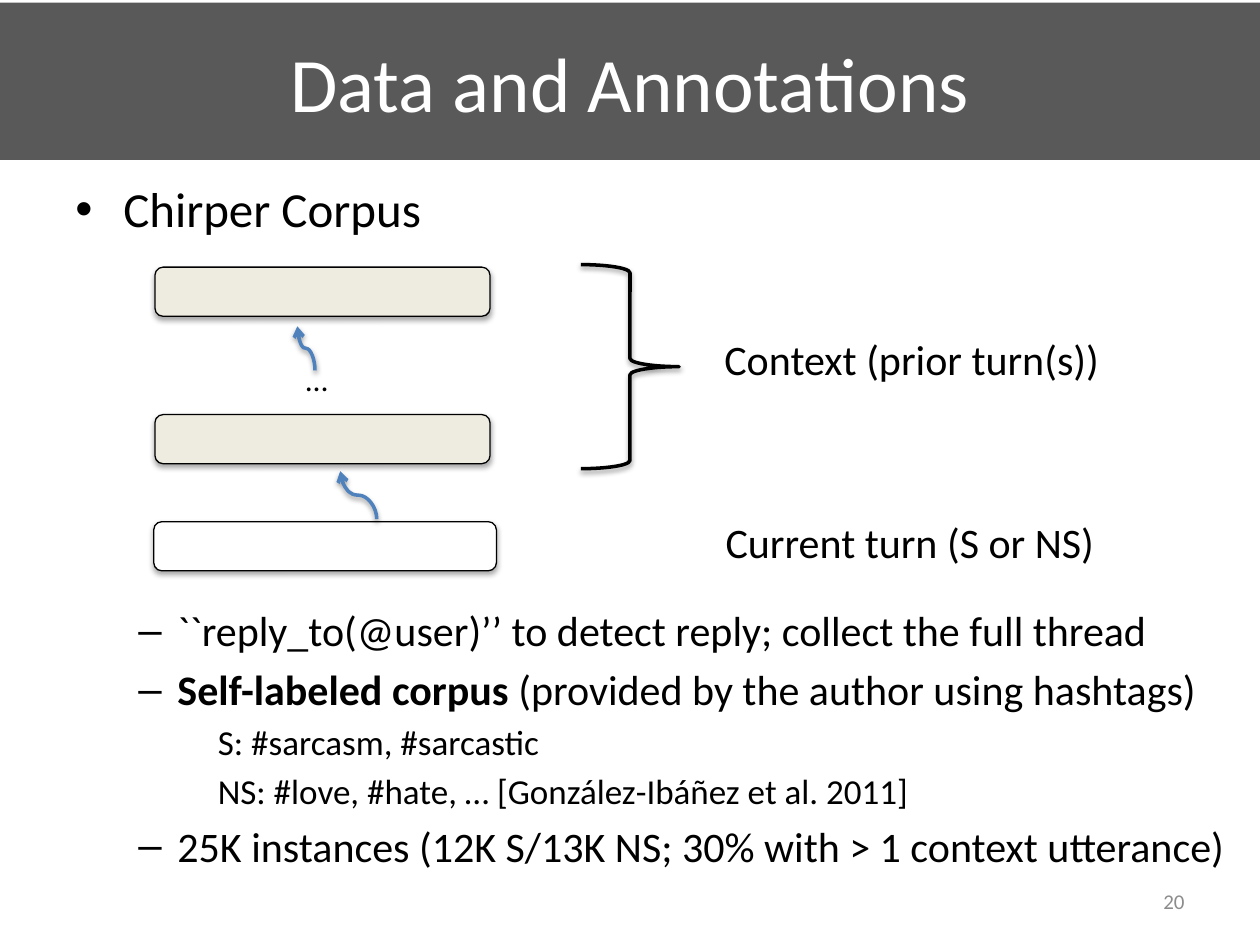
from dataclasses import dataclass

from lxml import etree
from pptx import Presentation
from pptx.dml.color import RGBColor
from pptx.enum.shapes import MSO_CONNECTOR, MSO_SHAPE
from pptx.enum.text import MSO_ANCHOR, PP_ALIGN
from pptx.oxml.ns import qn
from pptx.util import Inches, Pt

CURVE = MSO_CONNECTOR.CURVE
RECT, ROUNDED, BRACE = MSO_SHAPE.RECTANGLE, MSO_SHAPE.ROUNDED_RECTANGLE, MSO_SHAPE.RIGHT_BRACE
LEFT, CENTER, RIGHT = PP_ALIGN.LEFT, PP_ALIGN.CENTER, PP_ALIGN.RIGHT
TOP, MIDDLE = MSO_ANCHOR.TOP, MSO_ANCHOR.MIDDLE


@dataclass(frozen=True)
class Theme:
    """Colours, font and type sizes of the slide."""
    font: str = "Calibri"
    ink: str = "000000"
    paper: str = "FFFFFF"
    band: str = "595959"
    context: str = "EEECE1"
    arrow: str = "4F81BD"
    muted: str = "8C8C8C"
    title: int = 44
    heading: int = 28
    body: int = 24
    detail: int = 20
    dots: int = 18
    number: int = 12


T = Theme()


def add_text(p, text, size=T.body, color=T.ink, bold=False, align=LEFT):
    """Append a formatted run to a paragraph."""
    p.alignment = align
    r = p.add_run()
    r.text = text
    r.font.name, r.font.size, r.font.bold = T.font, Pt(size), bold
    r.font.color.rgb = RGBColor.from_string(color)


def add_label(s, box, text, anchor=TOP, wrap=False, **fmt):
    """Place a one-line text box."""
    tf = s.shapes.add_textbox(*map(Inches, box)).text_frame
    tf.word_wrap, tf.vertical_anchor = wrap, anchor
    add_text(tf.paragraphs[0], text, **fmt)


def set_bullet(p, margin, hang=0, char=None):
    """Set a paragraph's indent and bullet."""
    pPr = p._p.get_or_add_pPr()
    pPr.set("marL", str(Inches(margin)))
    pPr.set("indent", str(-Inches(hang)))
    if char:
        etree.SubElement(pPr, qn("a:buFont")).set("typeface", "Arial")
        etree.SubElement(pPr, qn("a:buChar")).set("char", char)
    else:
        etree.SubElement(pPr, qn("a:buNone"))


def add_shadow(shape, dist=1.6, alpha=38):
    """Give a shape a soft shadow straight below it."""
    effects = etree.SubElement(shape._element.spPr, qn("a:effectLst"))
    shadow = etree.SubElement(effects, qn("a:outerShdw"), blurRad=str(Pt(3.1)),
                              dist=str(Pt(dist)), dir="5400000", rotWithShape="0")
    color = etree.SubElement(shadow, qn("a:srgbClr"), val=T.ink)
    etree.SubElement(color, qn("a:alpha"), val=str(alpha * 1000))


def add_turn(s, box, fill):
    """Draw the rounded bar of one conversation turn."""
    sp = s.shapes.add_shape(ROUNDED, *map(Inches, box))
    sp.fill.solid()
    sp.fill.fore_color.rgb = RGBColor.from_string(fill)
    sp.line.color.rgb = RGBColor.from_string(T.ink)
    sp.line.width = Pt(0.75)
    add_shadow(sp, dist=1.8, alpha=35)


def add_brace(s, box):
    """Draw the brace that groups the context turns."""
    sp = s.shapes.add_shape(BRACE, *map(Inches, box))
    sp.fill.background()
    sp.line.color.rgb = RGBColor.from_string(T.ink)
    sp.line.width = Pt(2)
    add_shadow(sp)


def add_reply(s, box):
    """Draw a curved arrow from the box's bottom right to its top left."""
    x, y, w, h = box
    left, top = x + (w - h) / 2, y + (h - w) / 2
    c = s.shapes.add_connector(CURVE, Inches(left), Inches(top + w),
                               Inches(left + h), Inches(top))
    c._element.spPr.find(qn("a:xfrm")).set("rot", str(270 * 60000))
    c.line.color.rgb = RGBColor.from_string(T.arrow)
    c.line.width = Pt(2)
    etree.SubElement(c.line._get_or_add_ln(), qn("a:tailEnd")).set("type", "arrow")
    add_shadow(c)


def add_title(s, box, text):
    """Draw the title band."""
    sp = s.shapes.add_shape(RECT, *map(Inches, box))
    sp.shadow.inherit = False
    sp.fill.solid()
    sp.fill.fore_color.rgb = RGBColor.from_string(T.band)
    sp.line.fill.background()
    sp.text_frame.vertical_anchor = MIDDLE
    add_text(sp.text_frame.paragraphs[0], text, size=T.title, color=T.paper, align=CENTER)


def add_heading(s, box, text):
    """Place the top-level bullet."""
    tf = s.shapes.add_textbox(*map(Inches, box)).text_frame
    tf.word_wrap = True
    set_bullet(tf.paragraphs[0], 0.38, 0.38, "•")
    add_text(tf.paragraphs[0], text, size=T.heading)


def add_details(s, box, items):
    """Place the dashed points and the lines below them."""
    tf = s.shapes.add_textbox(*map(Inches, box)).text_frame
    tf.word_wrap = True
    for i, (is_point, runs) in enumerate(items):
        p = tf.add_paragraph() if i else tf.paragraphs[0]
        size = T.body if is_point else T.detail
        p.level = 1 if is_point else 2
        p.space_before = Pt(0.2 * size if i else 0)
        if is_point:
            set_bullet(p, 0.81, 0.31, "–")
        else:
            set_bullet(p, 1.13)
        for text, bold in runs:
            add_text(p, text, size=size, bold=bold)


def add_thread(s, box):
    """Draw the thread of turns, its replies and its labels."""
    x, y, w, h = box
    bar = 0.39
    add_turn(s, (x, y + h - bar, 2.72, bar), T.paper)
    for top in (y, y + 1.17):
        add_turn(s, (x + 0.01, top, 2.66, bar), T.context)
    add_brace(s, (x + 3.39, y - 0.02, 0.78, 1.62))
    add_reply(s, (x + 1.48, y + 1.62, 0.29, 0.38))
    add_reply(s, (x + 1.14, y + 0.47, 0.14, 0.35))
    add_label(s, (x + 1.11, y + 0.69, 0.46, 0.4), "…", size=T.dots)
    add_label(s, (x + 4.43, y + 0.48, w - 4.43, 0.5), "Context (prior turn(s))")
    add_label(s, (x + 4.44, y + 1.93, w - 4.44, 0.5), "Current turn (S or NS)")


def main():
    """Build and save the slide."""
    prs = Presentation()
    prs.slide_width, prs.slide_height = Inches(10), Inches(7.5)
    s = prs.slides.add_slide(prs.slide_layouts[6])
    add_title(s, (0, 0.02, 10, 1.25), "Data and Annotations")
    add_heading(s, (0.5, 1.37, 9.45, 0.58), "Chirper Corpus")
    add_thread(s, (1.22, 2.12, 7.72, 2.41))
    add_details(s, (0.5, 4.75, 9.45, 2.2), [
        (True, [("``reply_to(@user)’’ to detect reply; collect the full thread", False)]),
        (True, [("Self-labeled corpus ", True),
                ("(provided by the author using hashtags)", False)]),
        (False, [("S: #sarcasm, #sarcastic", False)]),
        (False, [("NS: #love, #hate, … [González-Ibáñez et al. 2011]", False)]),
        (True, [("25K instances (12K S/13K NS; 30% with > 1 context utterance)", False)]),
    ])
    add_label(s, (7.17, 6.95, 2.33, 0.4), "20", anchor=MIDDLE, wrap=True,
              size=T.number, color=T.muted, align=RIGHT)
    prs.save("out.pptx")


if __name__ == "__main__":
    main()
